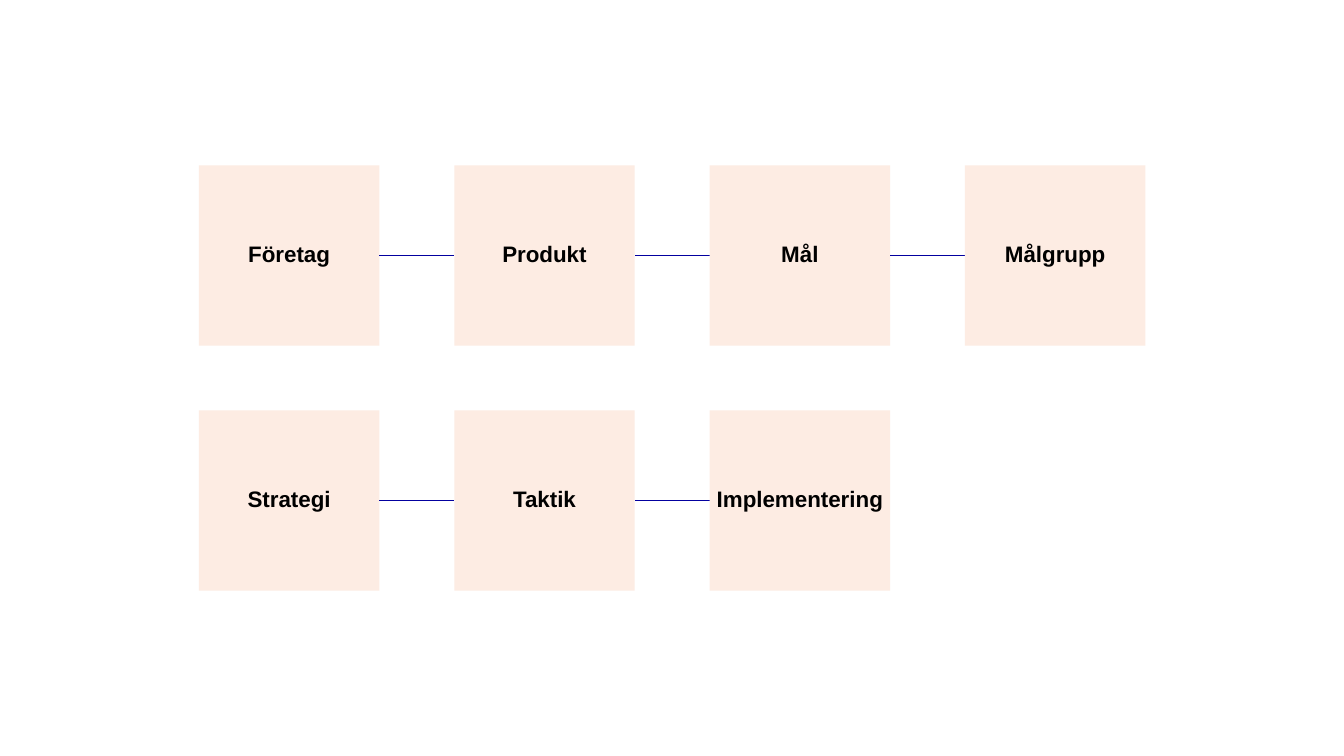
from dataclasses import dataclass

from pptx import Presentation
from pptx.dml.color import RGBColor
from pptx.enum.shapes import MSO_CONNECTOR, MSO_SHAPE
from pptx.enum.text import MSO_ANCHOR, PP_ALIGN
from pptx.oxml.ns import qn
from pptx.slide import Slide
from pptx.util import Emu, Pt
from lxml import etree

RECT = MSO_SHAPE.RECTANGLE
STRAIGHT = MSO_CONNECTOR.STRAIGHT
CENTER = PP_ALIGN.CENTER
MIDDLE = MSO_ANCHOR.MIDDLE

EMU_PER_PX = 3048  # 300 px to the inch
SLIDE_W, SLIDE_H = 4000, 2250
LEFT, TOP = 592, 492
BOX = 537
COL_PITCH, ROW_PITCH = 760, 729
INSET_Y = 15

BOX_FILL, LINE_COLOR, TEXT_COLOR = "FDECE3", "03009F", "000000"
FONT = {"name": "Arial", "size": Pt(16), "bold": True}
PARAGRAPH = {"alignment": CENTER, "line_spacing": 0.9, "space_after": Pt(5.6)}

ROWS = [
    ["Företag", "Produkt", "Mål", "Målgrupp"],
    ["Strategi", "Taktik", "Implementering"],
]


@dataclass(frozen=True)
class Step:
    label: str
    col: int
    row: int

    @property
    def x(self) -> int:
        return LEFT + self.col * COL_PITCH

    @property
    def y(self) -> int:
        return TOP + self.row * ROW_PITCH


def px(n: int) -> Emu:
    return Emu(n * EMU_PER_PX)


def rgb(color: str) -> RGBColor:
    return RGBColor.from_string(color)


def apply(obj: object, values: dict) -> None:
    for name, value in values.items():
        setattr(obj, name, value)


def add_box(slide: Slide, step: Step) -> None:
    sp = slide.shapes.add_shape(RECT, px(step.x), px(step.y), px(BOX), px(BOX))
    sp.shadow.inherit = False
    sp.fill.solid()
    sp.fill.fore_color.rgb = rgb(BOX_FILL)
    sp.line.fill.background()
    tf = sp.text_frame
    apply(tf, {
        "word_wrap": True, "vertical_anchor": MIDDLE,
        "margin_left": 0, "margin_right": 0,
        "margin_top": px(INSET_Y), "margin_bottom": px(INSET_Y),
    })
    p = tf.paragraphs[0]
    apply(p, PARAGRAPH)
    r = p.add_run()
    r.text = step.label
    apply(r.font, FONT)
    r.font.color.rgb = rgb(TEXT_COLOR)


def add_link(slide: Slide, step: Step) -> None:
    """Join a step to the one on its left."""
    y = px(step.y + BOX // 2)
    previous_right = step.x - COL_PITCH + BOX
    line = slide.shapes.add_connector(STRAIGHT, px(step.x), y, px(previous_right), y)
    line.line.color.rgb = rgb(LINE_COLOR)
    line.line.width = Pt(1)
    etree.SubElement(line._element.spPr, qn("a:effectLst"))


def main() -> None:
    prs = Presentation()
    prs.slide_width, prs.slide_height = px(SLIDE_W), px(SLIDE_H)
    slide = prs.slides.add_slide(prs.slide_layouts[6])
    for row, labels in enumerate(ROWS):
        for col, label in enumerate(labels):
            step = Step(label, col, row)
            if col:
                add_link(slide, step)
            add_box(slide, step)
    prs.save("out.pptx")


if __name__ == "__main__":
    main()
